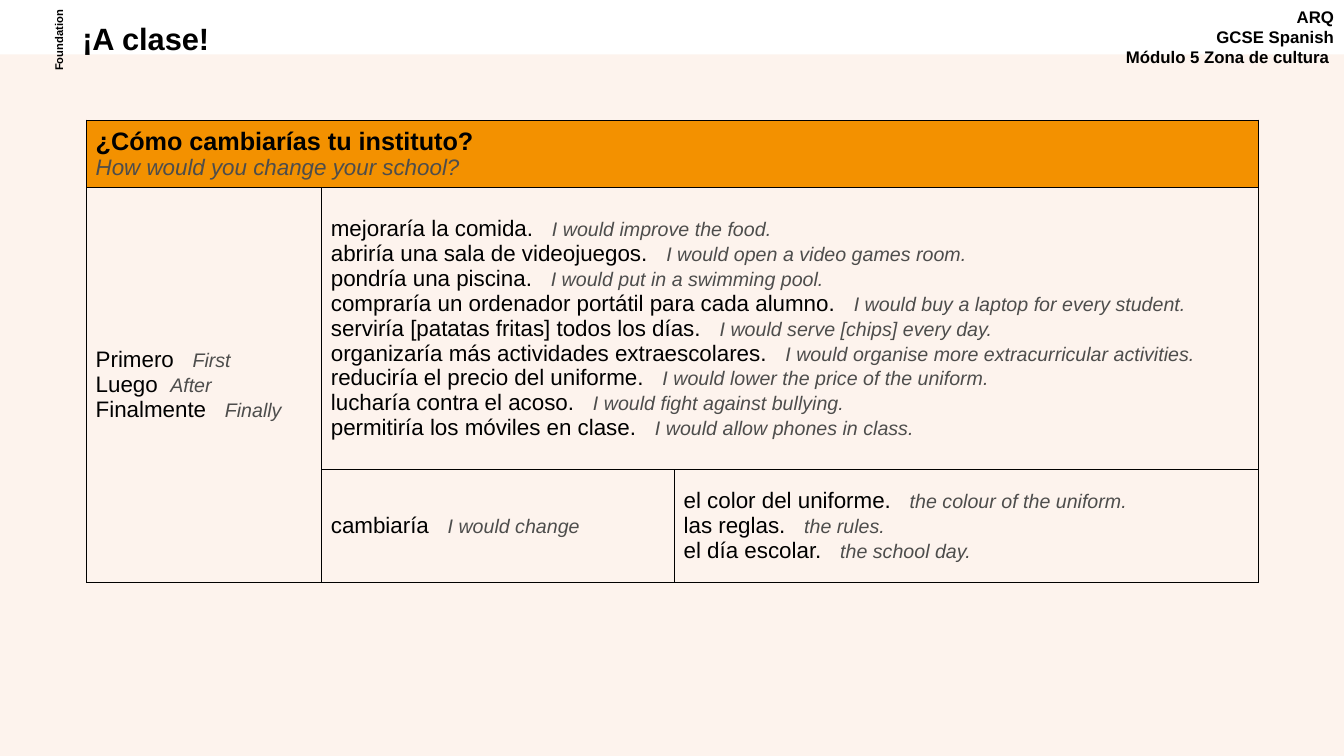
"""Build a Spanish vocabulary slide with a sentence-builder table."""
from lxml.etree import SubElement
from pptx import Presentation
from pptx.dml.color import RGBColor
from pptx.enum.shapes import MSO_SHAPE
from pptx.enum.text import MSO_ANCHOR, MSO_AUTO_SIZE, PP_ALIGN
from pptx.oxml.ns import qn
from pptx.util import Inches, Pt

COLORS = {"ink": "000000", "translation": "4D4D4C", "header": "F39100", "band": "FDF3ED"}
GRID_COLUMNS, GRID_ROWS, UNIT = 80, 45, 1 / 6

SEQUENCE = [("Primero", "First"), ("Luego", "After", 4.45), ("Finalmente", "Finally")]
CHANGES = [
    ("mejoraría la comida.", "I would improve the food."),
    ("abriría una sala de videojuegos.", "I would open a video games room."),
    ("pondría una piscina.", "I would put in a swimming pool."),
    ("compraría un ordenador portátil para cada alumno.", "I would buy a laptop for every student."),
    ("serviría [patatas fritas] todos los días.", "I would serve [chips] every day."),
    ("organizaría más actividades extraescolares.", "I would organise more extracurricular activities."),
    ("reduciría el precio del uniforme.", "I would lower the price of the uniform."),
    ("lucharía contra el acoso.", "I would fight against bullying."),
    ("permitiría los móviles en clase.", "I would allow phones in class."),
]
VERB = [("cambiaría", "I would change")]
OBJECTS = [
    ("el color del uniforme.", "the colour of the uniform."),
    ("las reglas.", "the rules."),
    ("el día escolar.", "the school day."),
]


def grid(*units):
    """Convert grid units to slide lengths."""
    return [Inches(unit * UNIT) for unit in units]


class VocabularySlide:
    """Hold the style and the current slide."""

    def __init__(self, presentation, font_name="Arial"):
        self.font_name = font_name
        self.slide = presentation.slides.add_slide(presentation.slide_layouts[5])

    def style(self, font, size, color="ink", bold=False, italic=False):
        """Apply the slide's font."""
        font.name, font.size, font.bold, font.italic = self.font_name, Pt(size), bold, italic
        font.color.rgb = RGBColor.from_string(COLORS[color])

    def band(self, *box):
        """Draw a plain tinted rectangle."""
        shape = self.slide.shapes.add_shape(MSO_SHAPE.RECTANGLE, *grid(*box))
        shape.shadow.inherit = False
        shape.fill.solid()
        shape.fill.fore_color.rgb = RGBColor.from_string(COLORS["band"])
        shape.line.fill.background()

    def title(self, text, *box):
        """Place the title in front of the band."""
        shape = self.slide.shapes.title
        shape.element.getparent().append(shape.element)
        shape.left, shape.top, shape.width, shape.height = grid(*box)
        frame = shape.text_frame
        frame.text = text
        frame.auto_size, frame.vertical_anchor = MSO_AUTO_SIZE.NONE, MSO_ANCHOR.TOP
        paragraph = frame.paragraphs[0]
        paragraph.alignment, paragraph.line_spacing = PP_ALIGN.LEFT, 0.9
        self.style(paragraph.font, 22, bold=True)

    def label(self, lines, size, alignment, *box, rotation=0):
        """Add a bold text box."""
        shape = self.slide.shapes.add_textbox(*grid(*box))
        shape.rotation = rotation
        frame = shape.text_frame
        frame.word_wrap = True
        frame.text = "\n".join(lines)
        for paragraph in frame.paragraphs:
            paragraph.alignment = alignment
            self.style(paragraph.font, size, bold=True)

    def table(self, left, top, columns, rows):
        """Add an unfilled table with thin borders."""
        box = grid(left, top, sum(columns), sum(rows))
        table = self.slide.shapes.add_table(len(rows), len(columns), *box).table
        table.first_row = table.horz_banding = False
        for column, width in zip(table.columns, grid(*columns)):
            column.width = width
        for row, height in zip(table.rows, grid(*rows)):
            row.height = height
        for cell in table.iter_cells():
            self.border(cell)
            cell.fill.background()
            cell.vertical_anchor = MSO_ANCHOR.MIDDLE
            cell.margin_left = cell.margin_right = Inches(0.09)
            cell.margin_top = cell.margin_bottom = Inches(0.04)
        return table

    def border(self, cell):
        """Outline all four sides of a cell."""
        properties = cell._tc.get_or_add_tcPr()
        for side in ("a:lnL", "a:lnR", "a:lnT", "a:lnB"):
            line = SubElement(properties, qn(side), w=str(Pt(0.75)))
            SubElement(SubElement(line, qn("a:solidFill")), qn("a:srgbClr"), val=COLORS["ink"])

    def heading(self, cell, question, translation):
        """Write the question and its translation in a filled cell."""
        cell.fill.solid()
        cell.fill.fore_color.rgb = RGBColor.from_string(COLORS["header"])
        cell.text = f"{question}\n{translation}"
        first, second = cell.text_frame.paragraphs
        self.style(first.font, 18, bold=True)
        self.style(second.font, 16, "translation", italic=True)

    def phrases(self, cell, entries):
        """Write one phrase and its translation per paragraph."""
        frame = cell.text_frame
        for index, (spanish, english, *gap) in enumerate(entries):
            paragraph = frame.add_paragraph() if index else frame.paragraphs[0]
            for text in (spanish, " ", english):
                run = paragraph.add_run()
                run.text = text
                if text == english:
                    self.style(run.font, 14, "translation", italic=True)
                else:
                    self.style(run.font, 16)
                if text == " ":
                    spacing = gap[0] if gap else 8.9
                    run._r.get_or_add_rPr().set("spc", str(round(spacing * 100)))


def main():
    """Build and save the presentation."""
    presentation = Presentation()
    presentation.slide_width, presentation.slide_height = grid(GRID_COLUMNS, GRID_ROWS)
    page = VocabularySlide(presentation)
    page.band(0, 3.24, GRID_COLUMNS, GRID_ROWS - 3.24)
    course = ["ARQ", "GCSE Spanish", "Módulo 5 Zona de cultura "]
    page.label(course, 12, PP_ALIGN.RIGHT, 65.95, 0.1, 14.05, 4.6)
    page.title("¡A clase!", 4.3, 1.15, 41.3, 2.6)
    page.label(["Foundation"], 8, PP_ALIGN.CENTER, 0.4, 1.75, 6.1, 1.3, rotation=270)

    table = page.table(5.16, 7.15, columns=(14, 21, 34.75), rows=(4, 16.8, 6.72))
    table.cell(0, 0).merge(table.cell(0, 2))
    table.cell(1, 0).merge(table.cell(2, 0))
    table.cell(1, 1).merge(table.cell(1, 2))
    page.heading(table.cell(0, 0), "¿Cómo cambiarías tu instituto?", "How would you change your school?")
    page.phrases(table.cell(1, 0), SEQUENCE)
    page.phrases(table.cell(1, 1), CHANGES)
    page.phrases(table.cell(2, 1), VERB)
    page.phrases(table.cell(2, 2), OBJECTS)
    presentation.save("out.pptx")


if __name__ == "__main__":
    main()
